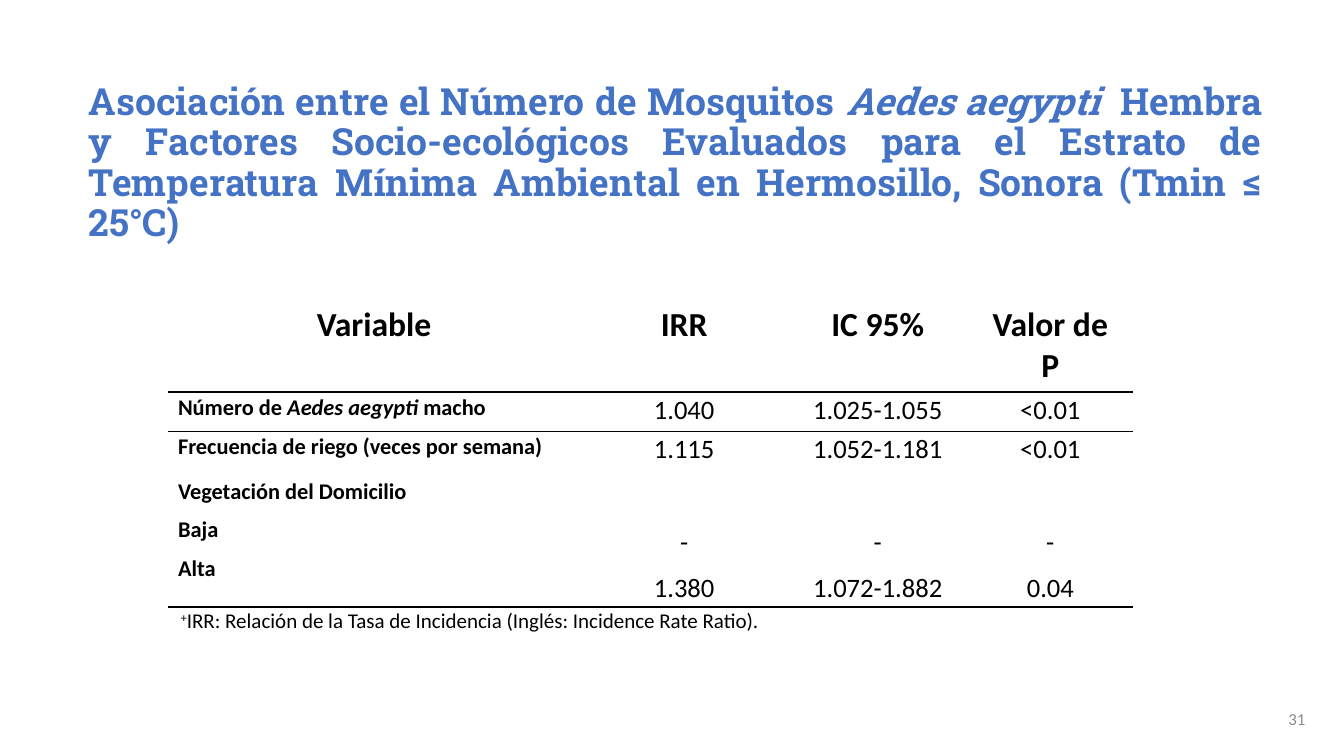
import dataclasses
import pptx
import pptx.dml.color
import pptx.enum.text
import pptx.oxml
import pptx.oxml.ns
import pptx.util

ALIGN = pptx.enum.text.PP_ALIGN
ANCHOR = pptx.enum.text.MSO_ANCHOR
WIDE, HIGH = 1600, 900
UNIT = pptx.util.Inches(7.5) // HIGH
BLACK, BLUE, GREY = "000000", "4472C4", "8C8C8C"
PLAIN = "{2D5ABB26-0587-4C30-8999-92F81FD0307C}"


@dataclasses.dataclass(frozen=True)
class Bit:
    text: str
    slant: bool = False
    lift: int = 0


@dataclasses.dataclass(frozen=True)
class Look:
    size: float
    bold: bool = False
    align: int = ALIGN.LEFT
    face: str = "Calibri"
    hue: str = BLACK
    lead: float = 1.0
    after: float = 0


@dataclasses.dataclass(frozen=True)
class Pad:
    side: float
    top: float
    base: float


@dataclasses.dataclass(frozen=True)
class Box:
    left: int
    top: int
    width: int
    height: int
    look: Look
    pad: Pad
    anchor: int
    lines: list


HEAD = Look(24, True, ALIGN.CENTER)
LABEL = Look(16, True, lead=1.07, after=8)
GROUP = Look(16, True, after=8)
VALUE = Look(19, align=ALIGN.CENTER, lead=1.07, after=8)
NOTE = Look(15, align=ALIGN.JUSTIFY, lead=1.07, after=8)
ROOMY, TIGHT, LOW = Pad(0.13, 0.07, 0.07), Pad(0.1, 0, 0), Pad(0.1, 0.46, 0)

BOXES = [
    Box(1470, 832, 96, 68, Look(12, align=ALIGN.RIGHT, hue=GREY),
        Pad(0.1, 0.1, 0.1), ANCHOR.TOP, [[Bit("31")]]),
    Box(90, 185, 1429, 122,
        Look(26.7, True, ALIGN.JUSTIFY, "Roboto Slab", BLUE, 0.9),
        Pad(0.13, 0.13, 0.13), ANCHOR.BOTTOM,
        [[Bit("Asociación entre el Número de Mosquitos "),
          Bit("Aedes aegypti ", True),
          Bit(" Hembra y Factores Socio-ecológicos Evaluados para el "
              "Estrato de Temperatura Mínima Ambiental en Hermosillo, "
              "Sonora (Tmin ≤ 25°C)")]]),
]

COLS = [491, 247, 214, 197]
ROWS = [112, 47, 55, 154, 65]
RULED = {0, 3}
LABELS = [
    [[Bit("Variable")]],
    [[Bit("Número de "), Bit("Aedes aegypti ", True), Bit("macho")]],
    [[Bit("Frecuencia de riego (veces por semana)")]],
    [[Bit("Vegetación del Domicilio")], [Bit("Baja")], [Bit("Alta")]],
    [[Bit(" +", lift=30000),
      Bit("IRR: Relación de la Tasa de Incidencia "
          "(Inglés: Incidence Rate Ratio).")]],
]
DATA = [
    ["IRR", "IC 95%", "Valor de P"],
    ["1.040", "1.025-1.055", "<0.01"],
    ["1.115", "1.052-1.181", "<0.01"],
    ["-\n1.380", "-\n1.072-1.882", "-\n0.04"],
    [],
]
LOOKS = [(HEAD, HEAD), (LABEL, VALUE), (LABEL, VALUE), (GROUP, VALUE),
         (NOTE, NOTE)]
PADS = [(ROOMY, ROOMY), (TIGHT, TIGHT), (TIGHT, TIGHT), (TIGHT, LOW),
        (TIGHT, TIGHT)]


def shade(code: str) -> pptx.dml.color.RGBColor:
    return pptx.dml.color.RGBColor.from_string(code)


def apply(thing, form: dict) -> None:
    for key, value in form.items():
        setattr(thing, key, value)


def edges(pad: Pad) -> dict:
    inch = pptx.util.Inches
    return {"margin_left": inch(pad.side), "margin_right": inch(pad.side),
            "margin_top": inch(pad.top), "margin_bottom": inch(pad.base)}


def write(frame, lines: list, look: Look) -> None:
    for spot, bits in enumerate(lines):
        para = frame.add_paragraph() if spot else frame.paragraphs[0]
        apply(para, {"alignment": look.align, "line_spacing": look.lead,
                     "space_after": pptx.util.Pt(look.after)})
        for bit in bits:
            run = para.add_run()
            run.text = bit.text
            apply(run.font, {"size": pptx.util.Pt(look.size),
                             "name": look.face, "bold": look.bold,
                             "italic": bit.slant})
            run.font.color.rgb = shade(look.hue)
            if bit.lift:
                run._r.get_or_add_rPr().set("baseline", str(bit.lift))


def place(slide, box: Box) -> None:
    frame = slide.shapes.add_textbox(
        *(UNIT * n for n in (box.left, box.top, box.width, box.height))
    ).text_frame
    apply(frame, edges(box.pad) | {"word_wrap": True,
                                   "vertical_anchor": box.anchor})
    write(frame, box.lines, box.look)


def rule(cell, tag: str) -> None:
    space = pptx.oxml.ns.nsdecls("a")
    line = pptx.oxml.parse_xml(
        f'<a:{tag} {space} w="12700"><a:solidFill><a:srgbClr val="{BLACK}"/>'
        f'</a:solidFill></a:{tag}>')
    cell._tc.get_or_add_tcPr().insert(0, line)


def chart(slide) -> None:
    table = slide.shapes.add_table(
        len(ROWS), len(COLS), UNIT * 200, UNIT * 354,
        UNIT * sum(COLS), UNIT * sum(ROWS)).table
    apply(table, {"first_row": False, "horz_banding": False})
    table._tbl.tblPr[0].text = PLAIN
    for col, width in zip(table.columns, COLS):
        col.width = UNIT * width
    for row, height in zip(table.rows, ROWS):
        row.height = UNIT * height
    for r, (label, items) in enumerate(zip(LABELS, DATA)):
        texts = [label] + [[[Bit(part)] for part in item.split("\n")]
                           for item in items]
        for c, lines in enumerate(texts):
            cell, kind = table.cell(r, c), min(c, 1)
            apply(cell, edges(PADS[r][kind]))
            write(cell.text_frame, lines, LOOKS[r][kind])
        for c in range(len(COLS)):
            cell = table.cell(r, c)
            cell.fill.background()
            if r in RULED:
                rule(cell, "lnB")
            if r - 1 in RULED:
                rule(cell, "lnT")
    last = len(ROWS) - 1
    table.cell(last, 0).merge(table.cell(last, len(COLS) - 1))


def main() -> None:
    deck = pptx.Presentation()
    apply(deck, {"slide_width": UNIT * WIDE, "slide_height": UNIT * HIGH})
    slide = deck.slides.add_slide(deck.slide_layouts[6])
    for box in BOXES:
        place(slide, box)
    chart(slide)
    deck.save("out.pptx")


if __name__ == "__main__":
    main()
